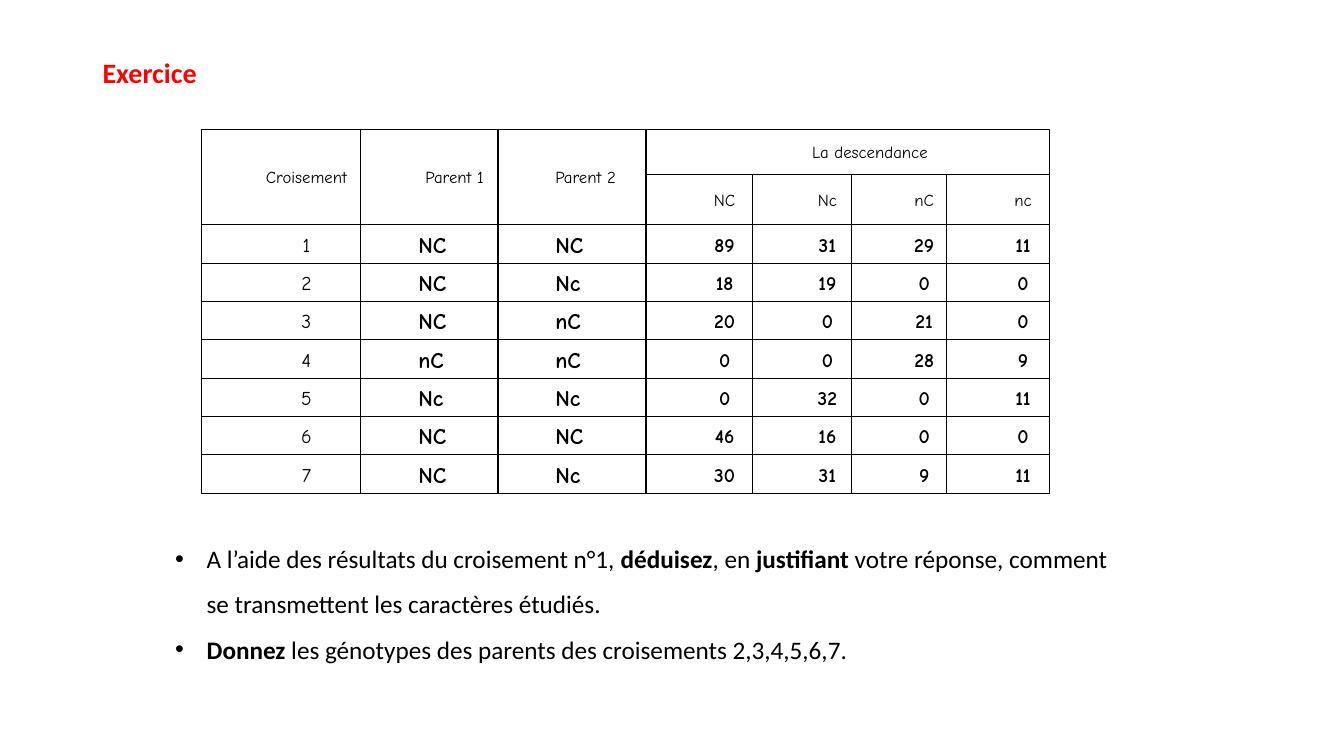
from dataclasses import dataclass

from lxml.etree import SubElement
from pptx import Presentation
from pptx.dml.color import RGBColor
from pptx.enum.text import MSO_ANCHOR as Anchor, MSO_AUTO_SIZE as AutoSize, PP_ALIGN as Align
from pptx.oxml.ns import qn
from pptx.util import Pt

COLORS = {"black": "000000", "red": "FF0000"}
TABLE_FONT, TEXT_FONT = "Comic Neue", "Calibri"

COL_WIDTHS = [113.8, 97.9, 105.8, 76.3, 70.6, 67.7, 73.4]
ROW_HEIGHTS = [32.4, 36] + [27.4] * 7
HEADERS = [
    ["Croisement", "Parent 1", "Parent 2", "La descendance ", "", "", ""],
    ["", "", "", "NC", "Nc", "nC", "nc"],
]
CROSSES = [
    ["1", "NC", "NC", "89", "31", "29", "11"],
    ["2", "NC", "Nc", "18", "19", "0", "0"],
    ["3", "NC", "nC", "20", "0", "21", "0"],
    ["4", "nC", "nC", "0", "0", "28", "9"],
    ["5", "Nc", "Nc", "0", "32", "0", "11"],
    ["6", "NC", "NC", "46", "16", "0", "0"],
    ["7", "NC", "Nc", "30", "31", "9", "11"],
]


@dataclass
class Style:
    size: float
    bold: bool = False
    font: str = TABLE_FONT
    color: str = "black"
    align: Align | None = None


@dataclass
class Box:
    left: float
    top: float
    width: float
    height: float


HEADER = Style(12, align=Align.CENTER)
HEADER_LEFT = Style(12, align=Align.LEFT)
NUMBER = Style(14, align=Align.CENTER)
PARENT = Style(16, bold=True, align=Align.LEFT)
COUNT = Style(14, bold=True, align=Align.CENTER)
BODY = Style(18, font=TEXT_FONT)
BODY_BOLD = Style(18, bold=True, font=TEXT_FONT)
TITLE = Style(20, bold=True, font=TEXT_FONT, color="red")

QUESTIONS = [
    [("A l’aide des résultats du croisement n°1, ", BODY), ("déduisez", BODY_BOLD),
     (", en ", BODY), ("justifiant", BODY_BOLD),
     (" votre réponse, comment se transmettent les caractères étudiés.", BODY)],
    [("Donnez", BODY_BOLD),
     (" les génotypes des parents des croisements 2,3,4,5,6,7.", BODY)],
]


def format_run(r, style: Style) -> None:
    r.font.name = style.font
    r.font.size = Pt(style.size)
    r.font.bold = style.bold
    r.font.color.rgb = RGBColor.from_string(COLORS[style.color])


def set_indent(p, margin: float, first: float = 0):
    pPr = p._p.get_or_add_pPr()
    pPr.set("marL", str(Pt(margin)))
    pPr.set("indent", str(Pt(first)))
    return pPr


def add_borders(cell) -> None:
    tcPr = cell._tc.get_or_add_tcPr()
    for side in ("a:lnL", "a:lnR", "a:lnT", "a:lnB"):
        ln = SubElement(tcPr, qn(side), w=str(Pt(1)))
        fill = SubElement(ln, qn("a:solidFill"))
        SubElement(fill, qn("a:srgbClr"), val=COLORS["black"])


def fill_cell(cell, text: str, style: Style) -> None:
    cell.margin_left = cell.margin_right = Pt(5)
    cell.margin_top = cell.margin_bottom = Pt(0)
    cell.vertical_anchor = Anchor.MIDDLE
    add_borders(cell)
    cell.fill.background()
    if not text:
        return
    p = cell.text_frame.paragraphs[0]
    p.text = text
    p.alignment = style.align
    p.line_spacing = 1.15
    p.space_before = p.space_after = Pt(6)
    set_indent(p, 36)
    format_run(p.runs[0], style)


def cell_style(row: int, col: int) -> Style:
    if row < len(HEADERS):
        return HEADER_LEFT if col == 2 else HEADER
    if col == 0:
        return NUMBER
    return PARENT if col < 3 else COUNT


def add_text_box(s, box: Box):
    sp = s.shapes.add_textbox(Pt(box.left), Pt(box.top), Pt(box.width), Pt(box.height))
    tf = sp.text_frame
    tf.word_wrap = True
    tf.auto_size = AutoSize.SHAPE_TO_FIT_TEXT
    return tf


def add_crosses_table(s, box: Box) -> None:
    rows = HEADERS + CROSSES
    table = s.shapes.add_table(len(rows), len(COL_WIDTHS), Pt(box.left), Pt(box.top),
                               Pt(box.width), Pt(box.height)).table
    table.first_row = table.horz_banding = False
    for column, width in zip(table.columns, COL_WIDTHS):
        column.width = Pt(width)
    for row, height in zip(table.rows, ROW_HEIGHTS):
        row.height = Pt(height)
    for i, texts in enumerate(rows):
        for j, text in enumerate(texts):
            fill_cell(table.cell(i, j), text, cell_style(i, j))
    for j in range(3):
        table.cell(0, j).merge(table.cell(1, j))
    table.cell(0, 3).merge(table.cell(0, 6))


def add_questions(s, box: Box) -> None:
    tf = add_text_box(s, box)
    for i, parts in enumerate(QUESTIONS):
        p = tf.add_paragraph() if i else tf.paragraphs[0]
        p.line_spacing = 1.5
        pPr = set_indent(p, 22.5, -22.5)
        SubElement(pPr, qn("a:buFont"), typeface="Arial")
        SubElement(pPr, qn("a:buChar"), char="•")
        for text, style in parts:
            r = p.add_run()
            r.text = text
            format_run(r, style)


def main() -> None:
    prs = Presentation()
    prs.slide_width, prs.slide_height = Pt(960), Pt(540)
    s = prs.slides.add_slide(prs.slide_layouts[6])

    # Table of crosses
    add_crosses_table(s, Box(144, 92.2, sum(COL_WIDTHS), sum(ROW_HEIGHTS)))

    # Questions
    add_questions(s, Box(118, 373.7, 690.5, 127.4))

    # Title
    tf = add_text_box(s, Box(66.2, 36, 188, 31.5))
    tf.text = "Exercice"
    format_run(tf.paragraphs[0].runs[0], TITLE)

    prs.save("out.pptx")


if __name__ == "__main__":
    main()
